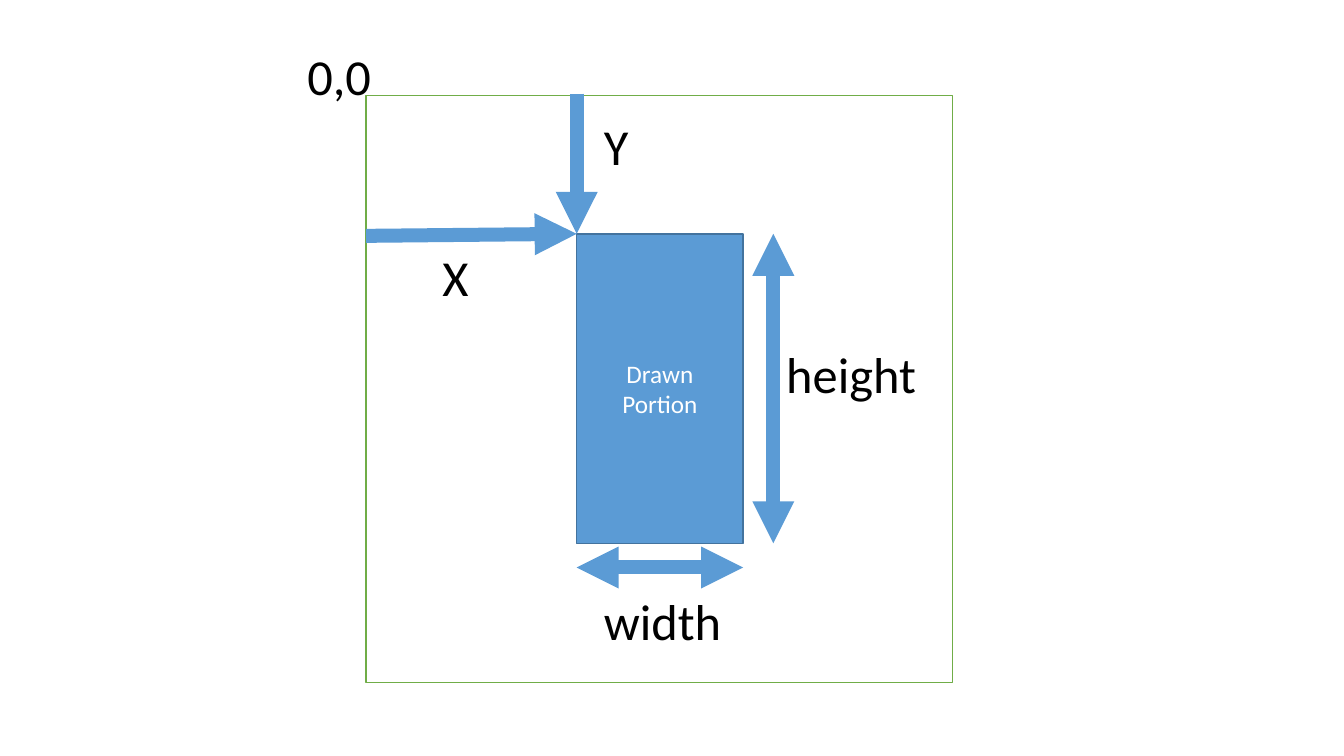
from lxml import etree
from pptx import Presentation
from pptx.dml.color import RGBColor
from pptx.enum.shapes import MSO_CONNECTOR, MSO_SHAPE
from pptx.enum.text import MSO_ANCHOR, MSO_AUTO_SIZE, PP_ALIGN
from pptx.oxml.ns import qn
from pptx.util import Inches, Pt

RECTANGLE = MSO_SHAPE.RECTANGLE
STRAIGHT = MSO_CONNECTOR.STRAIGHT
MIDDLE = MSO_ANCHOR.MIDDLE
CENTER = PP_ALIGN.CENTER
FIT_SHAPE = MSO_AUTO_SIZE.SHAPE_TO_FIT_TEXT

WHITE = RGBColor(0xFF, 0xFF, 0xFF)
BLACK = RGBColor(0x00, 0x00, 0x00)
GREEN = RGBColor(0x70, 0xAD, 0x47)
BLUE = RGBColor(0x5B, 0x9B, 0xD5)
DARK_BLUE = RGBColor(0x43, 0x73, 0x9E)


class Diagram:
    """Holds the text style and the current slide."""

    font_name = "Calibri"

    def __init__(self, page):
        self.page = page

    def fill_text(self, frame, lines, size, color, align=None):
        for index, line in enumerate(lines):
            para = frame.add_paragraph() if index else frame.paragraphs[0]
            para.alignment = align
            span = para.add_run()
            span.text = line
            span.font.color.rgb = color
            style = {"name": self.font_name, "size": Pt(size)}
            for name, value in style.items():
                setattr(span.font, name, value)

    def rectangle(self, left, top, width, height, fill, outline, lines=()):
        box = self.page.shapes.add_shape(
            RECTANGLE, Inches(left), Inches(top), Inches(width), Inches(height))
        box.shadow.inherit = False
        box.fill.solid()
        box.fill.fore_color.rgb = fill
        box.line.color.rgb = outline
        box.line.width = Pt(1)
        box.text_frame.vertical_anchor = MIDDLE
        self.fill_text(box.text_frame, lines, 18, WHITE, CENTER)

    def label(self, text, left, top, width):
        box = self.page.shapes.add_textbox(
            Inches(left), Inches(top), Inches(width), Inches(0.71))
        box.text_frame.word_wrap = False
        box.text_frame.auto_size = FIT_SHAPE
        self.fill_text(box.text_frame, [text], 36, BLACK)

    def arrow(self, start, end, both_ends=False):
        points = [Inches(value) for value in (*start, *end)]
        arrow = self.page.shapes.add_connector(STRAIGHT, *points)
        arrow.line.color.rgb = BLUE
        arrow.line.width = Pt(10)
        line = arrow.line._get_or_add_ln()
        for tag in ("a:headEnd", "a:tailEnd") if both_ends else ("a:tailEnd",):
            etree.SubElement(line, qn(tag), type="triangle")
        etree.SubElement(arrow._element.spPr, qn("a:effectLst"))


def main():
    deck = Presentation()
    deck.slide_width, deck.slide_height = Inches(13.33), Inches(7.5)
    diagram = Diagram(deck.slides.add_slide(deck.slide_layouts[6]))

    # Canvas and the drawn portion inside it
    canvas_left, canvas_top, canvas_side = 3.63, 0.95, 5.82
    left, top, width, height = 5.72, 2.32, 1.65, 3.07
    right, bottom = left + width, top + height
    diagram.rectangle(canvas_left, canvas_top, canvas_side, canvas_side,
                      WHITE, GREEN)
    diagram.rectangle(left, top, width, height, BLUE, DARK_BLUE,
                      ["Drawn", "Portion"])

    # Offsets from the canvas edges
    diagram.arrow((left, 0.93), (left, top))
    diagram.arrow((canvas_left, 2.34), (left, top))

    # Dimensions of the drawn portion
    width_y, height_x = bottom + 0.24, right + 0.3
    diagram.arrow((right, width_y), (left, width_y), both_ends=True)
    diagram.arrow((height_x, top), (height_x, bottom), both_ends=True)

    # Labels
    for text, label_left, label_top, label_width in (
            ("X", 4.29, 2.39, 0.46),
            ("Y", 5.89, 1.09, 0.45),
            ("0,0", 2.95, 0.4, 0.84),
            ("width", 5.89, 5.81, 1.38),
            ("height", 7.7, 3.35, 1.5)):
        diagram.label(text, label_left, label_top, label_width)

    deck.save("out.pptx")


if __name__ == "__main__":
    main()
